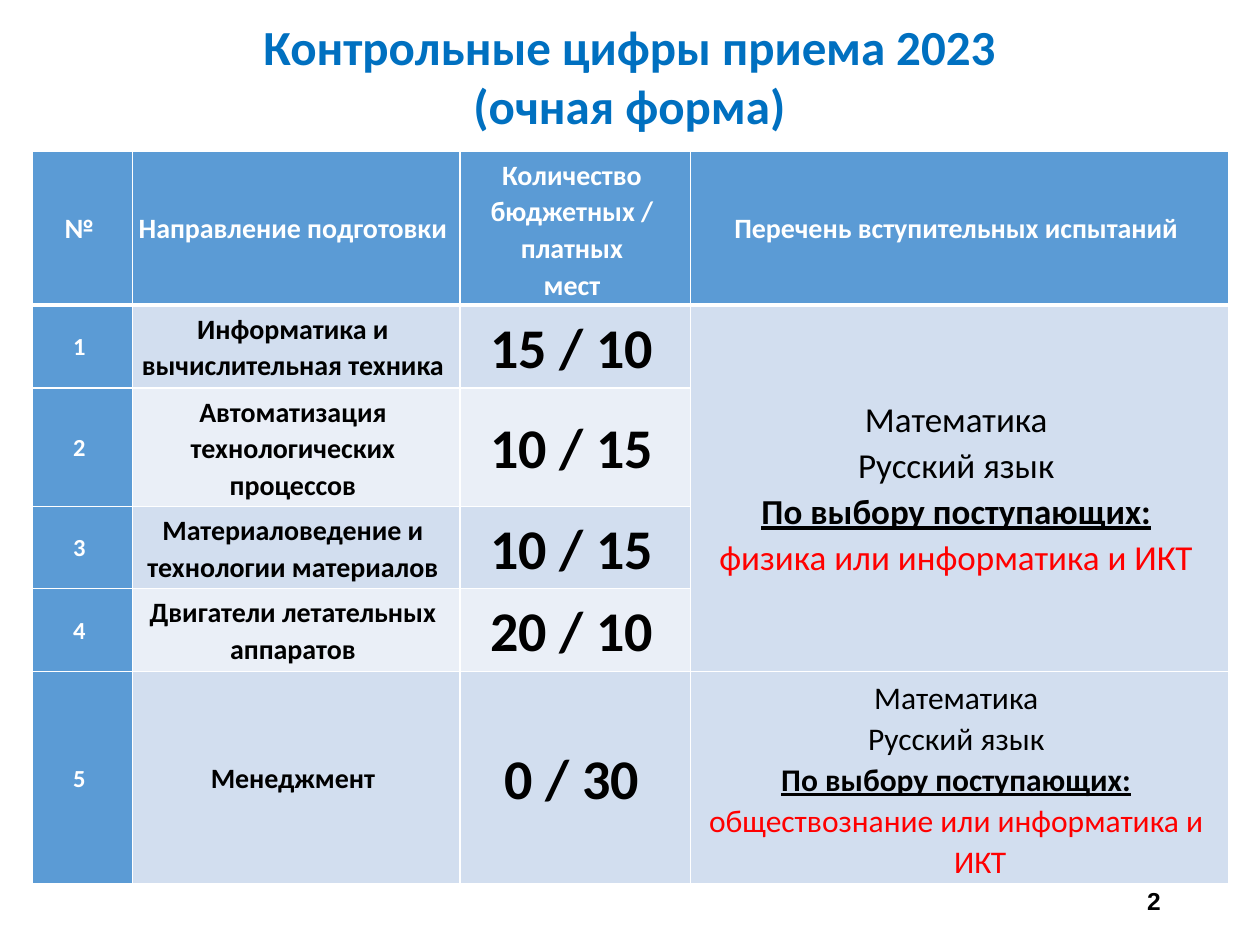
"""Build the slide with the 2023 admission figures for full-time study."""
import pptx
import pptx.dml.color
import pptx.enum.text
import pptx.oxml
import pptx.oxml.ns
import pptx.util

Inches = pptx.util.Inches
Pt = pptx.util.Pt
ALIGN = pptx.enum.text.PP_ALIGN
ANCHOR = pptx.enum.text.MSO_ANCHOR

COLORS = {
    "title": "0070C0",
    "header": "5B9BD5",
    "band_dark": "D2DEEF",
    "band_light": "EAEFF7",
    "white": "FFFFFF",
    "black": "000000",
    "choice": "FF0000",
}
COL_WIDTHS = [0.79, 2.6, 1.83, 4.27]
ROW_HEIGHTS = [1.21, 0.66, 0.94, 0.65, 0.66, 1.68]
HEADERS = [
    ["№"],
    ["Направление подготовки"],
    ["Количество бюджетных / платных", "мест"],
    ["Перечень вступительных испытаний"],
]
PROGRAMS = [
    ("Информатика и вычислительная техника", "15 / 10"),
    ("Автоматизация технологических процессов", "10 / 15"),
    ("Материаловедение и технологии материалов", "10 / 15"),
    ("Двигатели летательных аппаратов", "20 / 10"),
    ("Менеджмент", "0 / 30"),
]


def rgb(name):
    """Return the named colour."""
    return pptx.dml.color.RGBColor.from_string(COLORS[name])


def style(p, size, color, bold=True, font="Calibri", align=ALIGN.CENTER):
    """Set the font and alignment of a paragraph."""
    p.alignment = align
    p.font.name = font
    p.font.size = Pt(size)
    p.font.bold = bold
    p.font.color.rgb = rgb(color)


def fill_text(tf, lines, size, color, **options):
    """Write the lines as equally styled paragraphs and return them."""
    tf.text = "\n".join(lines)
    for p in tf.paragraphs:
        style(p, size, color, **options)
    return tf.paragraphs


def add_text(slide, box, lines, size, color, wrap=True, anchor=ANCHOR.TOP, **options):
    """Add a text box with styled paragraphs."""
    tf = slide.shapes.add_textbox(*map(Inches, box)).text_frame
    tf.word_wrap = wrap
    tf.vertical_anchor = anchor
    fill_text(tf, lines, size, color, **options)


def set_borders(cell, bottom):
    """Give a cell white borders, with its own width at the bottom."""
    tc_pr = cell._tc.get_or_add_tcPr()
    for side, width in (("L", 1), ("R", 1), ("T", 1), ("B", bottom)):
        tc_pr.append(pptx.oxml.parse_xml(
            f'<a:ln{side} {pptx.oxml.ns.nsdecls("a")} w="{Pt(width)}"><a:solidFill>'
            f'<a:srgbClr val="{COLORS["white"]}"/></a:solidFill></a:ln{side}>'))


def format_cell(cell, fill, bottom=1):
    """Set the borders, fill, margins and anchor of a cell."""
    set_borders(cell, bottom)
    cell.fill.solid()
    cell.fill.fore_color.rgb = rgb(fill)
    cell.margin_left, cell.margin_right = Inches(0.05), Inches(0.1)
    cell.margin_top = cell.margin_bottom = Inches(0.04)
    cell.vertical_anchor = ANCHOR.MIDDLE


def write_cell(cell, lines, size, color, **options):
    """Write styled paragraphs into a cell and return them."""
    paragraphs = fill_text(cell.text_frame, lines, size, color, **options)
    for p in paragraphs:
        p.line_spacing = 1.07
    return paragraphs


def write_exams(cell, choice, size):
    """List the entrance exams with the elective ones highlighted."""
    lines = ["Математика", "Русский язык", "По выбору поступающих:", choice]
    paragraphs = write_cell(cell, lines, size, "black", bold=False)
    for p in paragraphs:
        p_pr = p._p.get_or_add_pPr()
        p_pr.set("marL", str(Inches(0.38)))
        p_pr.set("indent", str(-Inches(0.38)))
    paragraphs[2].font.bold = True
    paragraphs[2].font.underline = True
    paragraphs[3].font.color.rgb = rgb("choice")


def add_admission_table(slide):
    """Add the table of programs, places and exams."""
    table = slide.shapes.add_table(
        len(ROW_HEIGHTS), len(COL_WIDTHS), Inches(0.26), Inches(1.2),
        Inches(sum(COL_WIDTHS)), Inches(sum(ROW_HEIGHTS))).table
    for column, width in zip(table.columns, COL_WIDTHS):
        column.width = Inches(width)
    for row, height in zip(table.rows, ROW_HEIGHTS):
        row.height = Inches(height)

    for col, lines in enumerate(HEADERS):
        format_cell(table.cell(0, col), "header", bottom=3)
        write_cell(table.cell(0, col), lines, 16, "white")

    for row, (program, places) in enumerate(PROGRAMS, start=1):
        band = "band_dark" if row % 2 else "band_light"
        for col, fill in enumerate(["header", band, band, "band_dark"]):
            format_cell(table.cell(row, col), fill)
        write_cell(table.cell(row, 0), [str(row)], 14, "white")
        write_cell(table.cell(row, 1), [program], 16, "black")
        write_cell(table.cell(row, 2), [places], 32, "black")

    table.cell(1, 3).merge(table.cell(4, 3))
    write_exams(table.cell(1, 3), "физика или информатика и ИКТ", 20)
    write_exams(table.cell(5, 3), "обществознание или информатика и ИКТ", 18)


def main():
    """Build and save the slide."""
    prs = pptx.Presentation()
    prs.slide_width, prs.slide_height = Inches(10), Inches(7.5)
    slide = prs.slides.add_slide(prs.slide_layouts[6])
    add_text(slide, (1.96, 0.08, 6.07, 1.53),
             ["Контрольные цифры приема 2023", "(очная форма)"], 28, "title", wrap=False)
    add_admission_table(slide)
    add_text(slide, (7.06, 6.95, 2.25, 0.4), ["2"], 14, "black",
             anchor=ANCHOR.MIDDLE, font="Arial", align=ALIGN.RIGHT)
    prs.save("out.pptx")


if __name__ == "__main__":
    main()
